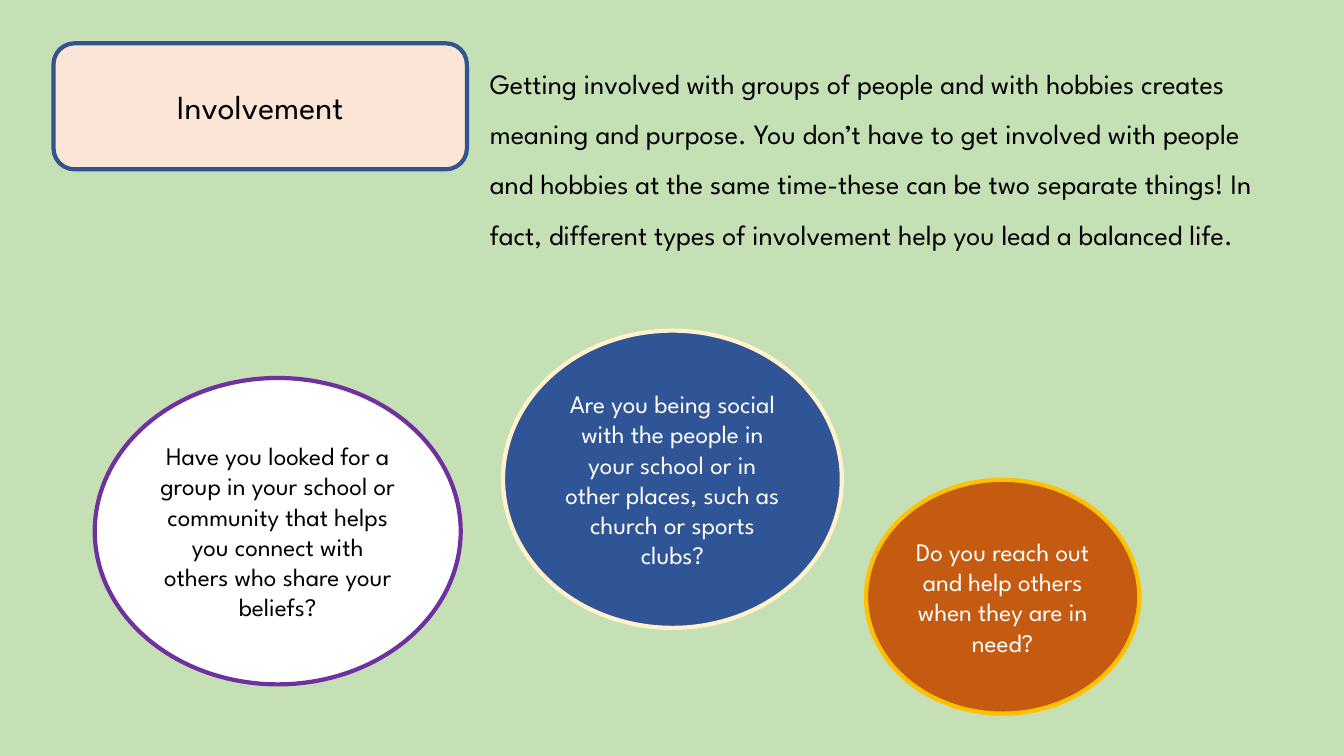
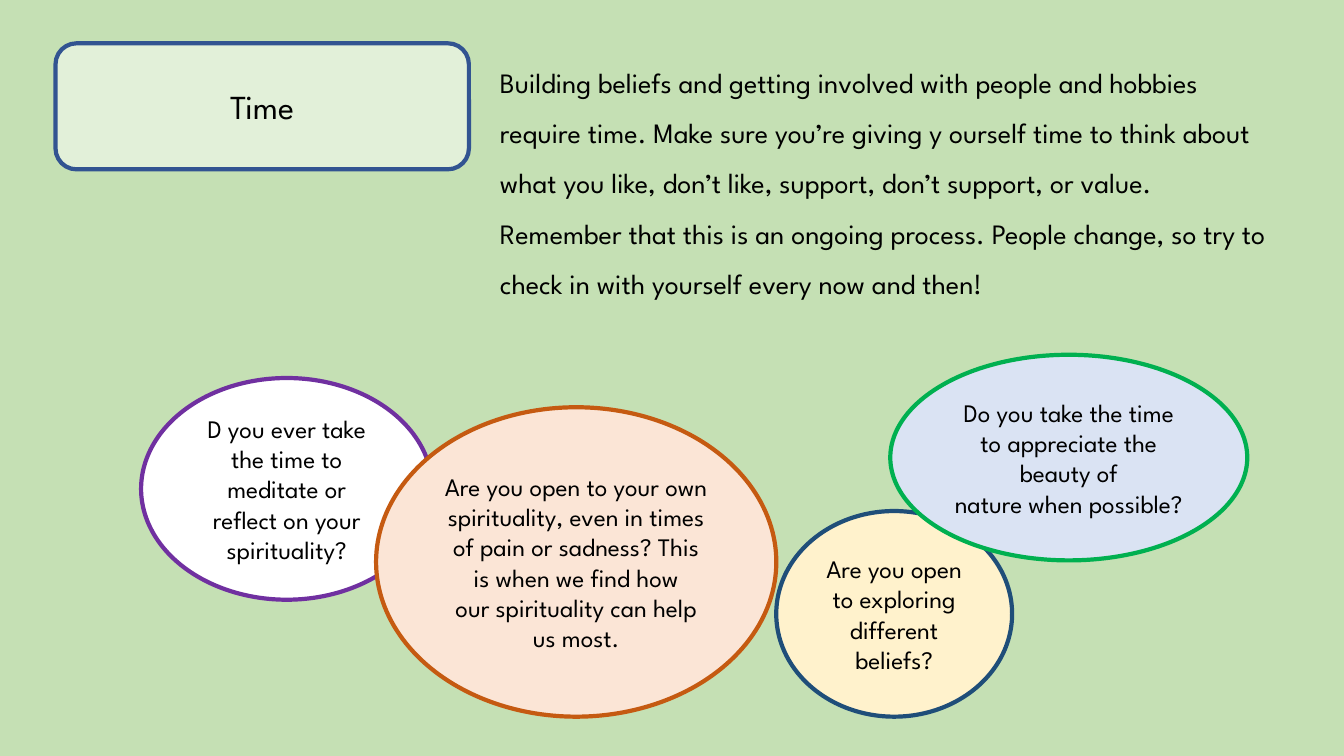
from dataclasses import dataclass

from pptx import Presentation
from pptx import util as u
from pptx.dml.color import RGBColor
from pptx.enum import shapes, text


@dataclass(frozen=True)
class Theme:
    font: str = "League Spartan"
    title_size: int = 24
    body_size: int = 20
    bubble_size: int = 18
    body_spacing: float = 1.5
    outline: int = 3
    background: str = "C5E0B4"
    title_line: str = "325491"
    black: str = "000000"
    white: str = "FFFFFF"
    purple: str = "7030A0"
    blue: str = "2F5597"
    pale_blue: str = "DAE3F3"
    navy: str = "1F4E79"
    cream: str = "FFF2CC"
    gold: str = "FFC000"
    orange: str = "C55A11"
    peach: str = "FBE5D6"
    mint: str = "E2F0D9"
    green: str = "00B050"


THEME = Theme()
WIDTH, HEIGHT = u.Inches(13.33), u.Inches(7.5)


@dataclass(frozen=True)
class Area:
    """Left, top, width and height as percentages of the slide's size."""
    left: float
    top: float
    width: float
    height: float

    def lengths(self) -> tuple[int, int, int, int]:
        return (round(WIDTH * self.left / 100), round(HEIGHT * self.top / 100),
                round(WIDTH * self.width / 100), round(HEIGHT * self.height / 100))


@dataclass(frozen=True)
class Bubble:
    area: Area
    fill: str
    line: str
    paras: tuple[str, ...]
    color: str = THEME.black


@dataclass(frozen=True)
class Topic:
    title: str
    title_left: float
    title_fill: str
    body: str
    body_area: Area
    bubbles: tuple[Bubble, ...]  # from back to front


TOPICS = (
    Topic(
        "Involvement", 3.98, THEME.peach,
        "Getting involved with groups of people and with hobbies creates meaning and "
        "purpose. You don’t have to get involved with people and hobbies at the same "
        "time-these can be two separate things! In fact, different types of involvement "
        "help you lead a balanced life.",
        Area(35.71, 5.87, 59.41, 34.13),
        (
            Bubble(Area(37.43, 43.73, 25.21, 39.33), THEME.blue, THEME.cream,
                   ("Are you being social with the people in your school or in other "
                    "places, such as church or sports clubs?",), THEME.white),
            Bubble(Area(64.44, 63.47, 20.33, 30.93), THEME.orange, THEME.gold,
                   ("Do you reach out and help others when they are in need?",),
                   THEME.white),
            Bubble(Area(7.05, 50, 27.23, 40.53), THEME.white, THEME.purple,
                   ("Have you looked for a group in your school or community that helps "
                    "you connect with others who share your beliefs?",)),
        ),
    ),
    Topic(
        "Time", 4.13, THEME.mint,
        "Building beliefs and getting involved with people and hobbies require time. "
        "Make sure you’re giving y ourself time to think about what you like, don’t "
        "like, support, don’t support, or value. Remember that this is an ongoing "
        "process. People change, so try to check in with yourself every now and then!",
        Area(36.46, 5.73, 59.41, 40.93),
        (
            Bubble(Area(10.5, 50, 21.68, 29.33), THEME.white, THEME.purple,
                   ("D you ever take the time to meditate or reflect on your "
                    "spirituality?",)),
            Bubble(Area(57.76, 67.6, 17.55, 27.2), THEME.cream, THEME.navy,
                   ("Are you open to exploring different beliefs?",)),
            Bubble(Area(27.98, 53.87, 29.78, 40.93), THEME.peach, THEME.orange,
                   ("Are you open to your own spirituality, even in times of pain or "
                    "sadness? This is when we find how",
                    "our spirituality can help us most.")),
            Bubble(Area(66.24, 46.93, 26.56, 27.2), THEME.pale_blue, THEME.green,
                   ("Do you take the time to appreciate the beauty of",
                    "nature when possible?")),
        ),
    ),
)


# Text, shared by every box
def write(frame, paras: tuple[str, ...], size: int, color: str,
          align: text.PP_ALIGN, spacing: float = 1.0) -> None:
    frame.word_wrap = True
    for index, words in enumerate(paras):
        para = frame.add_paragraph() if index else frame.paragraphs[0]
        para.alignment = align
        para.line_spacing = spacing
        span = para.add_run()
        span.text = words
        span.font.name = THEME.font
        span.font.size = u.Pt(size)
        span.font.color.rgb = RGBColor.from_string(color)


# Outlined shape with centred text
def draw_shape(page, kind: shapes.MSO_SHAPE, area: Area, fill: str, line: str,
               paras: tuple[str, ...], size: int, color: str) -> None:
    shape = page.shapes.add_shape(kind, *area.lengths())
    shape.shadow.inherit = False
    shape.fill.solid()
    shape.fill.fore_color.rgb = RGBColor.from_string(fill)
    shape.line.color.rgb = RGBColor.from_string(line)
    shape.line.width = u.Pt(THEME.outline)
    shape.text_frame.vertical_anchor = text.MSO_ANCHOR.MIDDLE
    write(shape.text_frame, paras, size, color, text.PP_ALIGN.CENTER)


def draw_body(page, topic: Topic) -> None:
    box = page.shapes.add_textbox(*topic.body_area.lengths())
    write(box.text_frame, (topic.body,), THEME.body_size, THEME.black,
          text.PP_ALIGN.LEFT, THEME.body_spacing)
    box.text_frame.auto_size = text.MSO_AUTO_SIZE.SHAPE_TO_FIT_TEXT


def draw_topic(deck, topic: Topic) -> None:
    page = deck.slides.add_slide(deck.slide_layouts[6])
    page.background.fill.solid()
    page.background.fill.fore_color.rgb = RGBColor.from_string(THEME.background)

    # Title and introduction
    draw_shape(page, shapes.MSO_SHAPE.ROUNDED_RECTANGLE,
               Area(topic.title_left, 5.73, 30.76, 16.67), topic.title_fill,
               THEME.title_line, (topic.title,), THEME.title_size, THEME.black)
    draw_body(page, topic)

    # Questions
    for bubble in topic.bubbles:
        draw_shape(page, shapes.MSO_SHAPE.OVAL, bubble.area, bubble.fill, bubble.line,
                   bubble.paras, THEME.bubble_size, bubble.color)


def main() -> None:
    deck = Presentation()
    deck.slide_width, deck.slide_height = WIDTH, HEIGHT
    for topic in TOPICS:
        draw_topic(deck, topic)
    deck.save("out.pptx")


if __name__ == "__main__":
    main()
